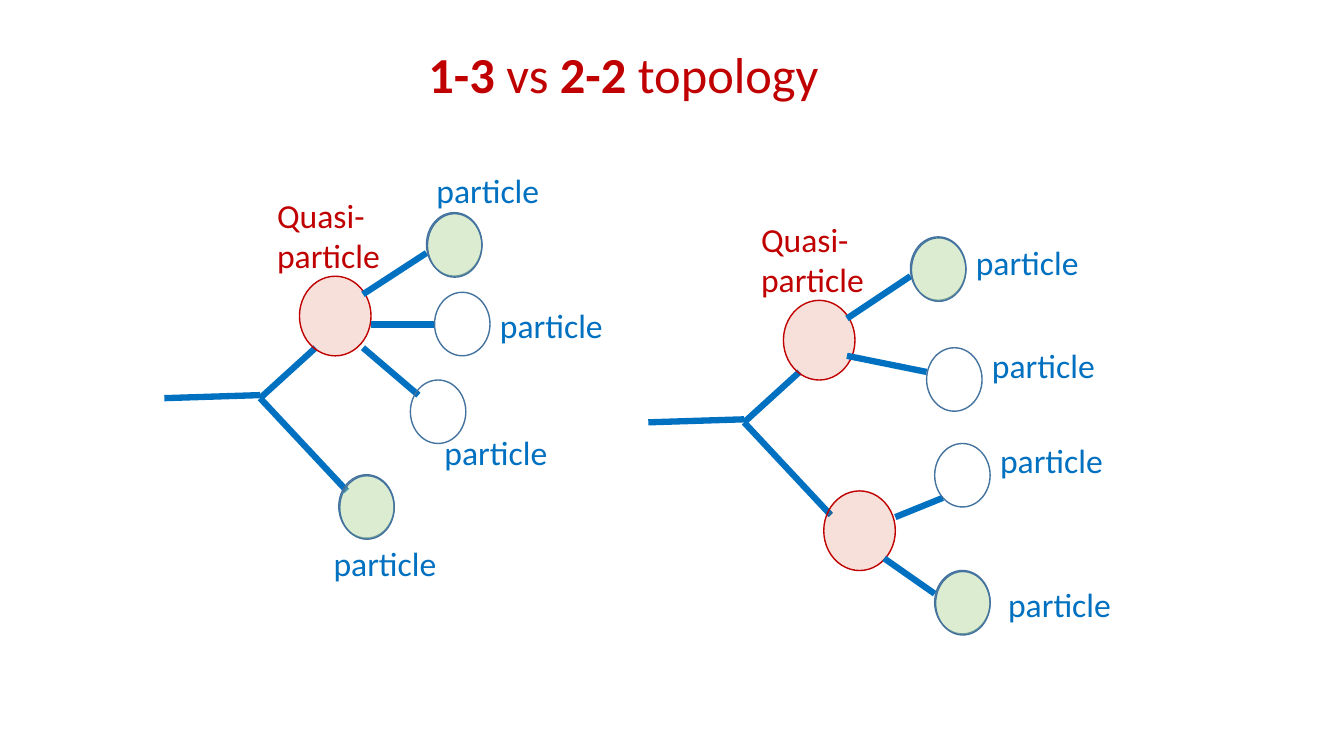
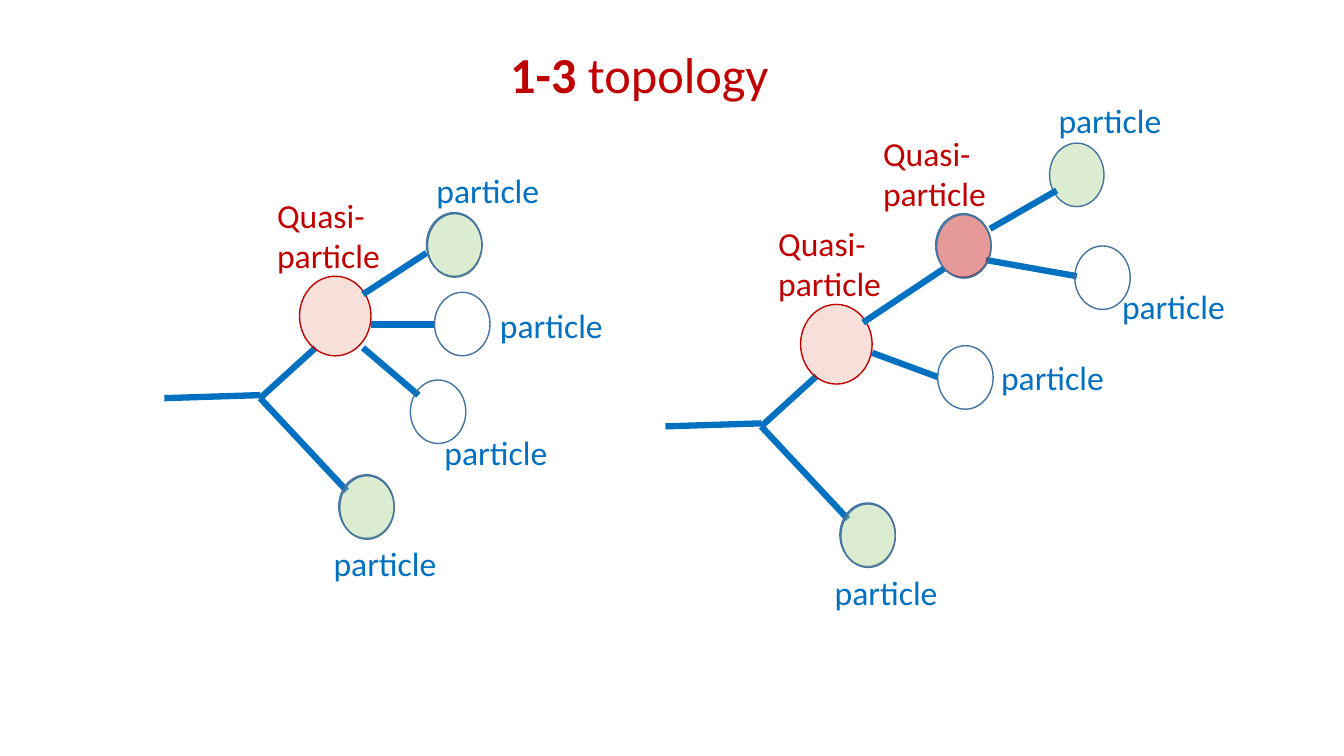
from lxml import etree
from pptx import Presentation
from pptx import util as u
from pptx.dml.color import RGBColor
from pptx.enum import shapes, text
from pptx.oxml.ns import qn

PX = 9144
COLORS = {
    "particle": "0070C0",
    "quasi": "C00000",
    "outline": "43739E",
    "quasi_fill": "CC3300",
    "green": "A9D18E",
    "red": "C00000",
}


def rgb(name):
    return RGBColor.from_string(COLORS[name])


class Deck:
    font = "Calibri"
    label_size = 24
    title_size = 36
    node_size = (55, 63)
    tint_size = (54, 63)
    quasi_size = (71, 79)

    def __init__(self, width, height):
        self.prs = Presentation()
        self.prs.slide_width = u.Emu(width * PX)
        self.prs.slide_height = u.Emu(height * PX)
        self.s = None

    def slide(self):
        self.s = self.prs.slides.add_slide(self.prs.slide_layouts[6])

    def text(self, x, y, w, h, parts, color, size):
        sp = self.s.shapes.add_textbox(*(u.Emu(v * PX) for v in (x, y, w, h)))
        tf = sp.text_frame
        tf.word_wrap = True
        tf.auto_size = text.MSO_AUTO_SIZE.SHAPE_TO_FIT_TEXT
        for words, bold in parts:
            r = tf.paragraphs[0].add_run()
            r.text = words
            r.font.name = self.font
            r.font.size = u.Pt(size)
            r.font.bold = bold
            r.font.color.rgb = rgb(color)

    def title(self, x, w, parts):
        self.text(x, 38, w, 71, parts, "quasi", self.title_size)

    def particle_label(self, x, y):
        self.text(x, y, 138, 50, [("particle", False)], "particle", self.label_size)

    def quasi_label(self, x, y):
        self.text(x, y, 137, 91, [("Quasi-particle", False)], "quasi", self.label_size)

    def line(self, x1, y1, x2, y2):
        c = self.s.shapes.add_connector(
            shapes.MSO_CONNECTOR.STRAIGHT, *(u.Emu(v * PX) for v in (x1, y1, x2, y2)))
        c.line.color.rgb = rgb("particle")
        c.line.width = u.Pt(4.5)
        etree.SubElement(c._element.spPr, qn("a:effectLst"))

    def ellipse(self, x, y, size, line="outline", fill=None, opacity=100):
        sp = self.s.shapes.add_shape(
            shapes.MSO_SHAPE.OVAL, *(u.Emu(v * PX) for v in (x, y, *size)))
        sp.shadow.inherit = False
        sp.line.color.rgb = rgb(line)
        sp.line.width = u.Pt(1)
        if fill is None:
            sp.fill.background()
            return
        sp.fill.solid()
        sp.fill.fore_color.rgb = rgb(fill)
        color = sp._element.spPr.find(qn("a:solidFill")).find(qn("a:srgbClr"))
        etree.SubElement(color, qn("a:alpha")).set("val", str(opacity * 1000))

    def quasi(self, x, y):
        self.ellipse(x, y, self.quasi_size, "quasi", "quasi_fill", 15)

    def tint(self, x, y, fill="green"):
        self.ellipse(x, y, self.tint_size, fill=fill, opacity=40)

    def node(self, x, y, fill=None):
        self.ellipse(x, y, self.node_size)
        if fill:
            self.tint(x + 1, y + 1, fill)

    def trunk(self, dx, dy):
        for x1, y1, x2, y2 in ((163, 395, 258, 392),
                               (258, 395, 313, 345),
                               (258, 395, 344, 487)):
            self.line(x1 + dx, y1 + dy, x2 + dx, y2 + dy)
        self.quasi(297 + dx, 274 + dy)
        self.quasi_label(265 + dx, 188 + dy)

    def lone_particle(self, dx, dy):
        self.node(336 + dx, 471 + dy, "green")
        self.particle_label(321 + dx, 534 + dy)

    def branches(self, lines, nodes, labels):
        for ends in lines:
            self.line(*ends)
        for node in nodes:
            self.node(*node)
        for spot in labels:
            self.particle_label(*spot)


def one_three(d):
    d.trunk(0, 0)
    d.lone_particle(0, 0)
    d.branches(
        lines=[(360, 292, 423, 251), (368, 322, 431, 322), (360, 345, 415, 392)],
        nodes=[(423, 211, "green"), (431, 290), (407, 377)],
        labels=[(423, 164), (486, 298), (431, 424)])


def two_two(d):
    d.trunk(480, 24)
    d.quasi(817, 487)
    d.branches(
        lines=[(840, 316, 903, 274), (840, 353, 919, 369),
               (888, 513, 935, 494), (877, 554, 927, 589)],
        nodes=[(903, 235, "green"), (919, 345), (927, 440), (927, 566, "green")],
        labels=[(958, 235), (974, 337), (982, 432), (990, 574)])


def cascade(d):
    d.trunk(497, 28)
    d.lone_particle(497, 28)
    d.branches(
        lines=[(856, 320, 937, 266), (865, 350, 930, 374), (978, 258, 1068, 274)],
        nodes=[(928, 212, "red"), (930, 343), (1066, 244)],
        labels=[(1040, 94), (983, 349), (1103, 279)])
    d.tint(1041, 142)
    d.line(982, 227, 1048, 189)
    d.quasi_label(866, 127)


def main():
    d = Deck(1333, 750)

    d.slide()
    d.title(415, 449, [("1-3 ", True), ("vs ", False), ("2-2", True), (" topology", False)])
    one_three(d)
    two_two(d)

    d.slide()
    d.title(496, 368, [("1-3 ", True), ("topology", False)])
    one_three(d)
    cascade(d)

    d.prs.save("out.pptx")


if __name__ == "__main__":
    main()
